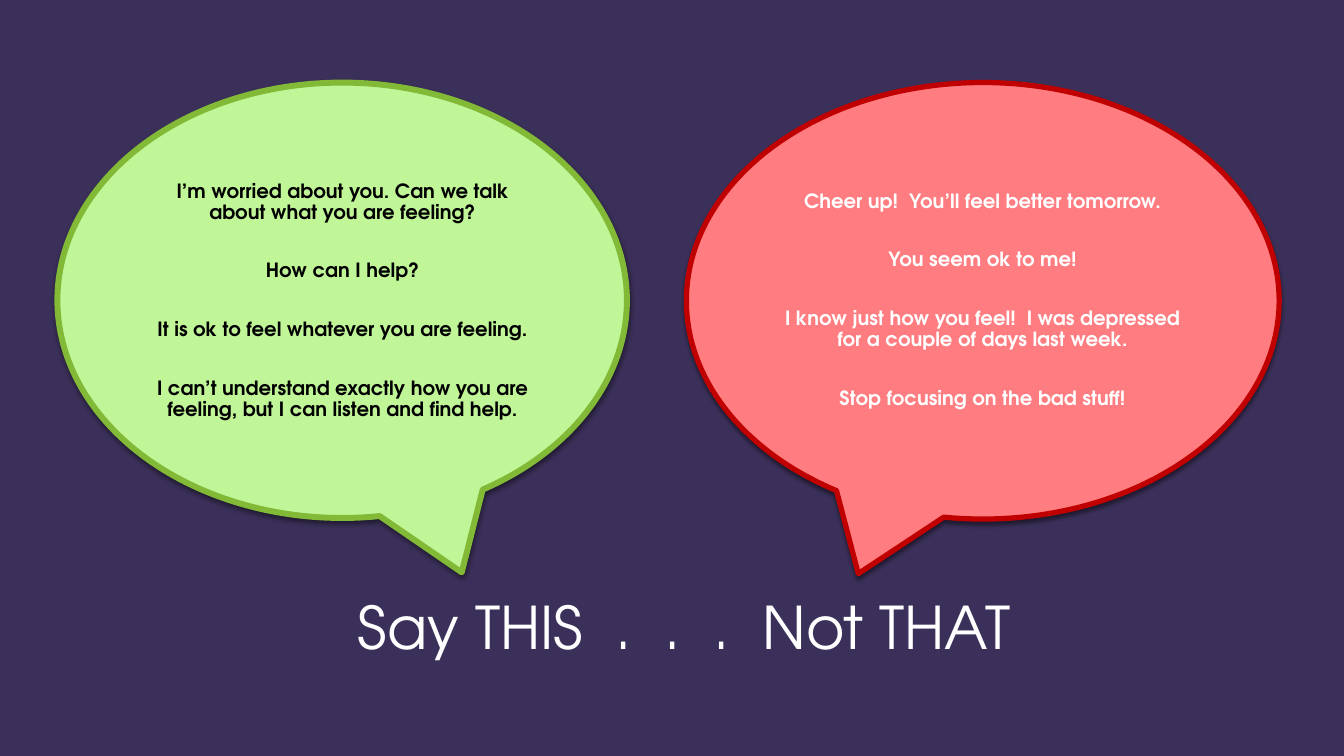
from lxml import etree
from pptx import Presentation
from pptx.dml.color import RGBColor
from pptx.enum.shapes import MSO_SHAPE
from pptx.enum.text import MSO_ANCHOR, MSO_AUTO_SIZE, PP_ALIGN
from pptx.oxml.ns import qn
from pptx.util import Pt

CALLOUT = MSO_SHAPE.OVAL_CALLOUT
TOP, MIDDLE = MSO_ANCHOR.TOP, MSO_ANCHOR.MIDDLE
LEFT, CENTER = PP_ALIGN.LEFT, PP_ALIGN.CENTER
NO_FIT = MSO_AUTO_SIZE.NONE

# Content
FONT = "TeX Gyre Adventor"
BACKGROUND = "3B3059"
TITLE = "Say THIS  .  .  .  Not THAT"
TITLE_BOX = (248.4, 424, 498.2, 110.2)

# Boxes are left, top, width, height; tail is the tip's offset from the centre
BUBBLES = [
    {
        "box": (41, 59, 406.8, 311),
        "phrase_box": (100.8, 105.1, 288, 219.6),
        "tail": 0.21,
        "fill": "C0F698", "outline": "82BA38", "outline_width": 4.25,
        "text_color": "000000",
        "phrases": [
            "I’m worried about you. Can we talk about what you are feeling?",
            "How can I help?",
            "It is ok to feel whatever you are feeling.",
            "I can’t understand exactly how you are feeling, but I can listen and find help.",
        ],
    },
    {
        "box": (490.3, 59, 423.4, 311.8),
        "phrase_box": (552.2, 104.4, 299.5, 220.3),
        "tail": -0.21,
        "fill": "FF7C80", "outline": "C00000", "outline_width": 3.75,
        "text_color": "FFFFFF",
        "phrases": [
            "Cheer up!  You’ll feel better tomorrow.",
            "You seem ok to me!",
            "I know just how you feel!  I was depressed for a couple of days last week.",
            "Stop focusing on the bad stuff!",
        ],
    },
]


def rgb(value):
    return RGBColor.from_string(value)


def points(box):
    return [Pt(length) for length in box]


def write(frame, paragraphs, *, size, color, bold=False, align=LEFT,
          anchor=TOP, inset=(7.2, 3.6), gap=0):
    frame.word_wrap = True
    frame.auto_size = NO_FIT
    frame.vertical_anchor = anchor
    frame.margin_left = frame.margin_right = Pt(inset[0])
    frame.margin_top = frame.margin_bottom = Pt(inset[1])
    for index, text in enumerate(paragraphs):
        paragraph = frame.add_paragraph() if index else frame.paragraphs[0]
        paragraph.alignment = align
        paragraph.line_spacing = 0.9
        paragraph.space_before = Pt(gap if index else 0)
        run = paragraph.add_run()
        run.text = text
        run.font.name = FONT
        run.font.size = Pt(size)
        run.font.bold = bold
        run.font.color.rgb = rgb(color)


def add_soft_shadow(shape):
    shape.shadow.inherit = False
    effects = shape.element.spPr.find(qn("a:effectLst"))
    shadow = etree.SubElement(effects, qn("a:outerShdw"), blurRad=str(Pt(3)),
                              dist=str(Pt(2)), dir="5400000", rotWithShape="0")
    black = etree.SubElement(shadow, qn("a:srgbClr"), val="000000")
    etree.SubElement(black, qn("a:alpha"), val="45000")


def add_bubble(slide, bubble):
    callout = slide.shapes.add_shape(CALLOUT, *points(bubble["box"]))
    callout.adjustments[0] = bubble["tail"]
    callout.adjustments[1] = 0.625
    callout.fill.solid()
    callout.fill.fore_color.rgb = rgb(bubble["fill"])
    callout.line.color.rgb = rgb(bubble["outline"])
    callout.line.width = Pt(bubble["outline_width"])
    etree.SubElement(callout.line._get_or_add_ln(), qn("a:round"))
    add_soft_shadow(callout)

    phrases = slide.shapes.add_textbox(*points(bubble["phrase_box"]))
    write(phrases.text_frame, bubble["phrases"], size=14, bold=True,
          color=bubble["text_color"], align=CENTER, anchor=MIDDLE,
          inset=(4.3, 4.3), gap=26.7)


def main():
    deck = Presentation()
    deck.slide_width, deck.slide_height = Pt(960), Pt(540)
    slide = deck.slides.add_slide(deck.slide_layouts[5])
    slide.background.fill.solid()
    slide.background.fill.fore_color.rgb = rgb(BACKGROUND)

    # Title below the bubbles
    title = slide.shapes.title
    title.left, title.top, title.width, title.height = points(TITLE_BOX)
    write(title.text_frame, [TITLE], size=42, color="FFFFFF")

    # Speech bubbles
    for bubble in BUBBLES:
        add_bubble(slide, bubble)

    deck.save("out.pptx")


if __name__ == "__main__":
    main()
